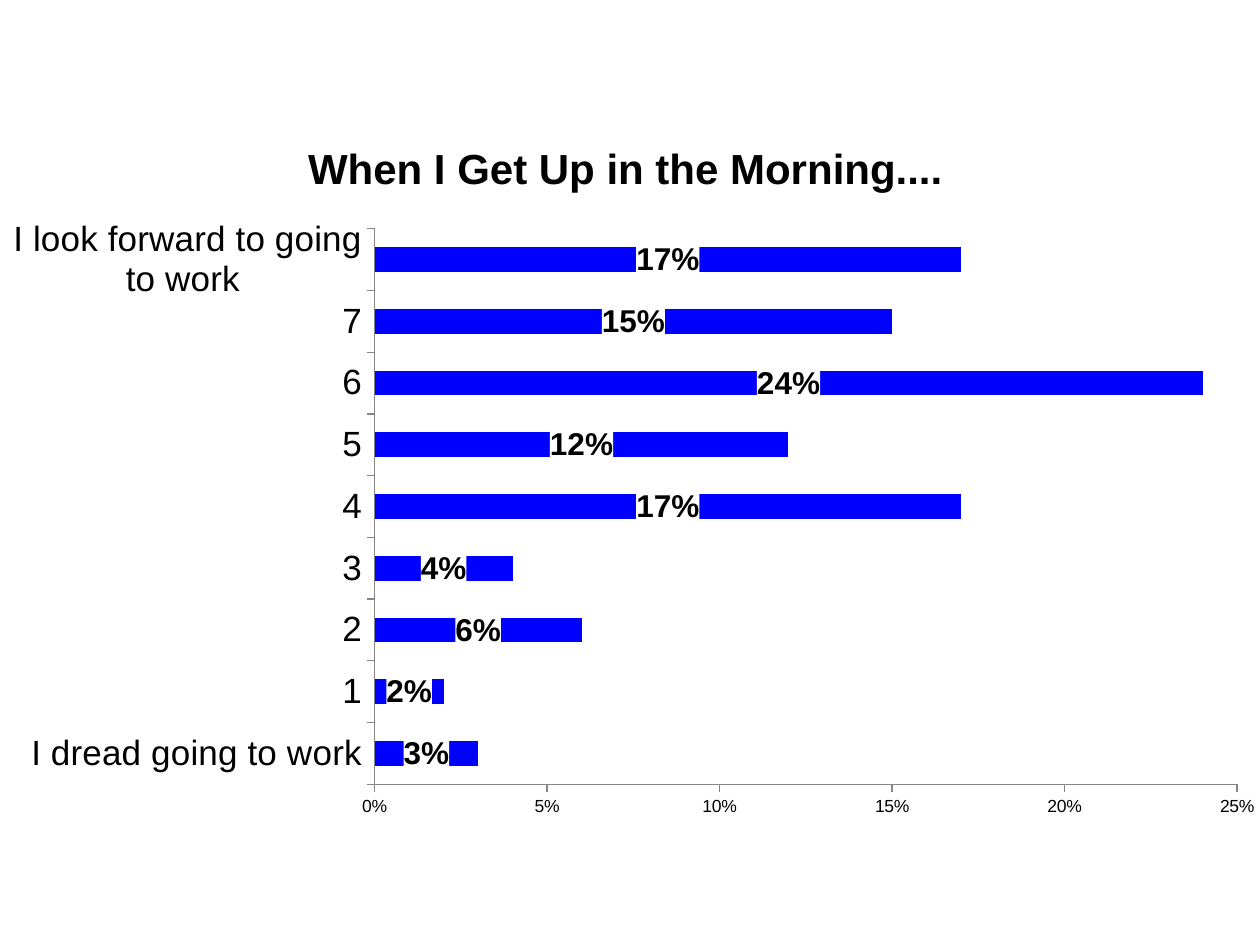
from dataclasses import dataclass
from typing import NamedTuple

from lxml.etree import SubElement
from pptx import Presentation
from pptx.chart.axis import _BaseAxis as Axis
from pptx.chart.chart import Chart
from pptx.chart.data import CategoryChartData
from pptx.dml.color import RGBColor
from pptx.enum.chart import XL_CHART_TYPE as ChartType
from pptx.enum.chart import XL_LABEL_POSITION as LabelPosition
from pptx.enum.chart import XL_TICK_MARK as TickMark
from pptx.oxml import parse_xml
from pptx.oxml.ns import nsdecls, qn
from pptx.util import Emu, Pt

PX_PER_INCH = 126


def px(length: int) -> Emu:
    return Emu(round(length * 914400 / PX_PER_INCH))


@dataclass(frozen=True)
class Theme:
    font: str = "Arial"
    ink: RGBColor = RGBColor(0, 0, 0)
    bar: RGBColor = RGBColor(0, 0, 255)
    axis: RGBColor = RGBColor(0x86, 0x86, 0x86)
    label_fill: str = "FFFFFF"
    title_size: Pt = Pt(24)
    answer_size: Pt = Pt(20)
    share_size: Pt = Pt(18)
    scale_size: Pt = Pt(10)


class Answer(NamedTuple):
    text: str
    share: float


class Box(NamedTuple):
    left: int
    top: int
    width: int
    height: int


THEME = Theme()
SURVEY = Box(-19, 113, 1299, 719)
BARS = Box(374, 229, 862, 556)
HEADING = Box(301, 134, 634, 44)
QUESTION = "When I Get Up in the Morning...."
ANSWERS = [
    Answer("I dread going to work", 0.03),
    Answer("1", 0.02),
    Answer("2", 0.06),
    Answer("3", 0.04),
    Answer("4", 0.17),
    Answer("5", 0.12),
    Answer("6", 0.24),
    Answer("7", 0.15),
    Answer(" I look forward to going to work", 0.17),
]


def place(part, position: int, box: Box, inner: bool = False) -> None:
    for old_layout in part.findall(qn("c:layout")):
        part.remove(old_layout)
    layout = parse_xml(f"<c:layout {nsdecls('c')}><c:manualLayout/></c:layout>")
    part.insert(position, layout)
    settings = {"layoutTarget": "inner"} if inner else {}
    settings |= {
        "xMode": "edge",
        "yMode": "edge",
        "x": round((box.left - SURVEY.left) / SURVEY.width, 3),
        "y": round((box.top - SURVEY.top) / SURVEY.height, 3),
    }
    if inner:
        settings |= {
            "w": round(box.width / SURVEY.width, 3),
            "h": round(box.height / SURVEY.height, 3),
        }
    for tag, value in settings.items():
        SubElement(layout[0], qn(f"c:{tag}")).set("val", str(value))


def style_axis(axis: Axis, size: Pt) -> None:
    axis.has_major_gridlines = False
    axis.major_tick_mark = TickMark.OUTSIDE
    axis.minor_tick_mark = TickMark.NONE
    axis.format.line.color.rgb = THEME.axis
    axis.format.line.width = Pt(0.75)
    axis.tick_labels.font.size = size


def add_question(chart: Chart) -> None:
    chart.has_title = True
    heading = chart.chart_title.text_frame.paragraphs[0]
    heading.text = QUESTION
    heading.font.name = THEME.font
    heading.font.size = THEME.title_size
    heading.font.bold = True
    heading.font.color.rgb = THEME.ink
    place(chart.chart_title.element, 1, HEADING)


def style_bars(chart: Chart) -> None:
    plot = chart.plots[0]
    plot.gap_width = 150
    plot.overlap = 100
    plot.vary_by_categories = False
    series = plot.series[0]
    series.invert_if_negative = False
    series.format.fill.solid()
    series.format.fill.fore_color.rgb = THEME.bar

    shares = series.data_labels
    shares.show_value = True
    shares.number_format = "0%"
    shares.number_format_is_linked = False
    shares.position = LabelPosition.CENTER
    shares.font.name = THEME.font
    shares.font.size = THEME.share_size
    shares.font.bold = True
    shares.font.color.rgb = THEME.ink
    label_text = chart.element.find(f".//{qn('c:dLbls')}/{qn('c:txPr')}")
    label_text.addprevious(parse_xml(
        f"<c:spPr {nsdecls('c', 'a')}><a:solidFill>"
        f'<a:srgbClr val="{THEME.label_fill}"/></a:solidFill></c:spPr>'
    ))


def main() -> None:
    deck = Presentation()
    deck.slide_width, deck.slide_height = px(1260), px(945)
    slide = deck.slides.add_slide(deck.slide_layouts[6])

    survey = CategoryChartData(number_format="0%")
    survey.categories = [answer.text for answer in ANSWERS]
    survey.add_series("Series 1", [answer.share for answer in ANSWERS])
    chart = slide.shapes.add_chart(
        ChartType.BAR_STACKED, *map(px, SURVEY), survey
    ).chart
    chart.has_legend = False
    chart.font.name = THEME.font
    chart.font.size = THEME.scale_size
    chart.font.color.rgb = THEME.ink

    add_question(chart)
    style_bars(chart)
    style_axis(chart.category_axis, THEME.answer_size)
    style_axis(chart.value_axis, THEME.scale_size)
    scale = chart.value_axis
    scale.minimum_scale, scale.maximum_scale, scale.major_unit = 0, 0.25, 0.05
    scale.tick_labels.number_format = "0%"
    scale.tick_labels.number_format_is_linked = False
    place(chart.element.find(f".//{qn('c:plotArea')}"), 0, BARS, inner=True)

    deck.save("out.pptx")


if __name__ == "__main__":
    main()
